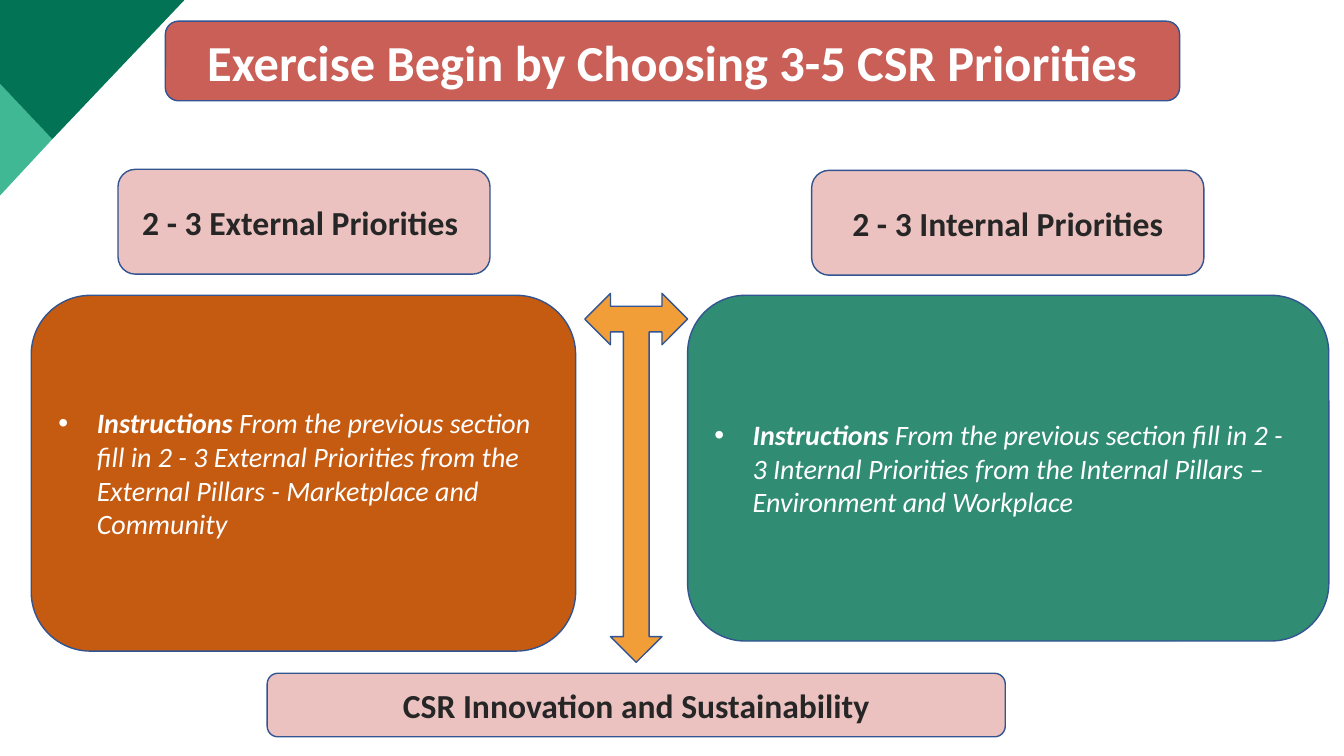
from lxml.etree import SubElement
from pptx import Presentation
from pptx.dml.color import RGBColor
from pptx.enum.shapes import MSO_SHAPE as Shape
from pptx.enum.text import MSO_ANCHOR as Anchor, PP_ALIGN as Align
from pptx.oxml.ns import qn
from pptx.util import Pt

PX = 9144
BULLET_INDENT = 38 * PX

WHITE = RGBColor(0xFF, 0xFF, 0xFF)
INK = RGBColor(0x26, 0x26, 0x26)
OUTLINE = RGBColor(0x32, 0x54, 0x91)
RED = RGBColor(0xC9, 0x5F, 0x57)
PINK = RGBColor(0xEB, 0xC2, 0xBF)
ORANGE = RGBColor(0xC5, 0x5A, 0x11)
GREEN = RGBColor(0x30, 0x8C, 0x73)
AMBER = RGBColor(0xF2, 0x9E, 0x38)
MINT = RGBColor(0x40, 0xB8, 0x94)
DARK_GREEN = RGBColor(0x02, 0x73, 0x54)

CORNER = [
    ([(0, 83), (52, 138), (0, 194)], MINT),
    ([(0, 0), (183, 0), (52, 138), (0, 83)], DARK_GREEN),
]
PANELS = [
    ((31, 293, 540, 353), ORANGE, "Instructions",
     " From the previous section fill in 2 - 3 External Priorities from the "
     "External Pillars - Marketplace and Community"),
    ((682, 293, 636, 343), GREEN, "Instructions ",
     "From the previous section fill in 2 - 3 Internal Priorities from the "
     "Internal Pillars – Environment and Workplace"),
]
ARROW = (580, 291, 102, 366)
HEADINGS = [
    ((117, 168, 369, 104), PINK, "2 - 3 External Priorities ", 24, INK),
    ((805, 169, 389, 104), PINK, "2 - 3 Internal Priorities", 24, INK),
    ((265, 668, 732, 63), PINK, "CSR Innovation and Sustainability", 24, INK),
    ((164, 21, 1006, 79), RED, "Exercise Begin by Choosing 3-5 CSR Priorities", 36, WHITE),
]


def add_box(slide, kind, box, fill):
    shape = slide.shapes.add_shape(kind, *(length * PX for length in box))
    shape.shadow.inherit = False
    shape.fill.solid()
    shape.fill.fore_color.rgb = fill
    shape.line.color.rgb = OUTLINE
    shape.line.width = Pt(1)
    shape.text_frame.word_wrap = True
    shape.text_frame.vertical_anchor = Anchor.MIDDLE
    return shape


def add_run(paragraph, text, size, color, bold=True, italic=False):
    run = paragraph.add_run()
    run.text = text
    font = run.font
    font.name, font.size, font.bold, font.italic = "Calibri", Pt(size), bold, italic
    font.color.rgb = color


def add_corner(slide, points, fill):
    builder = slide.shapes.build_freeform(*points[0], scale=PX)
    builder.add_line_segments(points[1:], close=True)
    shape = builder.convert_to_shape()
    shape.shadow.inherit = False
    shape.fill.solid()
    shape.fill.fore_color.rgb = fill
    shape.line.fill.background()


def add_panel(slide, box, fill, lead, body):
    paragraph = add_box(slide, Shape.ROUNDED_RECTANGLE, box, fill).text_frame.paragraphs[0]
    paragraph.alignment = Align.LEFT
    properties = paragraph._p.get_or_add_pPr()
    properties.set("marL", str(BULLET_INDENT))
    properties.set("indent", str(-BULLET_INDENT))
    SubElement(properties, qn("a:buFont"), typeface="Arial")
    SubElement(properties, qn("a:buChar"), char="•")
    add_run(paragraph, lead, 20, WHITE, italic=True)
    add_run(paragraph, body, 20, WHITE, bold=False, italic=True)


def add_heading(slide, box, fill, text, size, color):
    paragraph = add_box(slide, Shape.ROUNDED_RECTANGLE, box, fill).text_frame.paragraphs[0]
    paragraph.alignment = Align.CENTER
    add_run(paragraph, text, size, color)


def main():
    presentation = Presentation()
    presentation.slide_width = 1333 * PX
    presentation.slide_height = 750 * PX
    slide = presentation.slides.add_slide(presentation.slide_layouts[6])
    for corner in CORNER:
        add_corner(slide, *corner)
    for panel in PANELS:
        add_panel(slide, *panel)
    add_box(slide, Shape.LEFT_RIGHT_UP_ARROW, ARROW, AMBER).rotation = 180
    for heading in HEADINGS:
        add_heading(slide, *heading)
    presentation.save("out.pptx")


if __name__ == "__main__":
    main()
